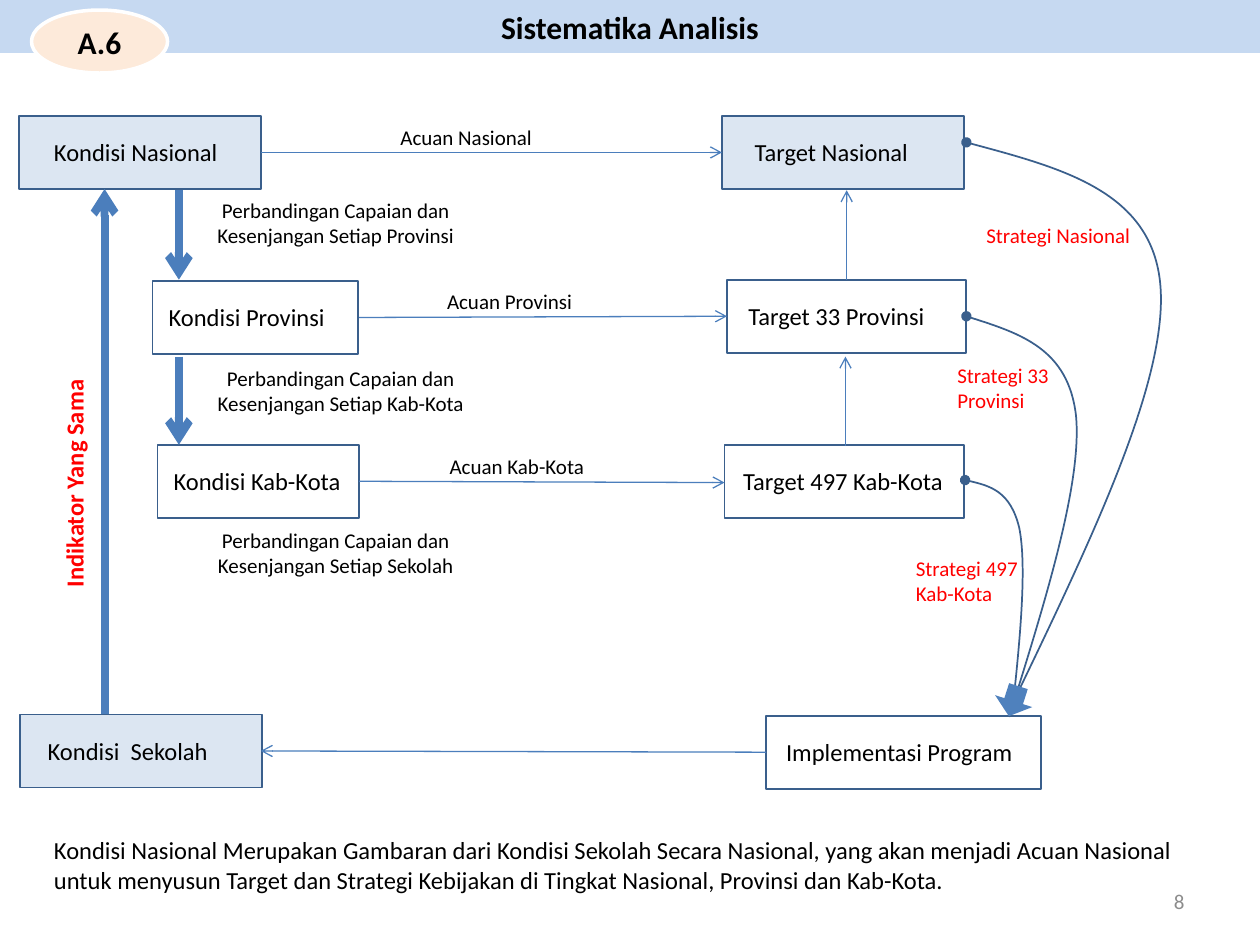
from dataclasses import dataclass

from lxml import etree
from pptx import Presentation
from pptx.dml.color import RGBColor
from pptx.enum.shapes import MSO_CONNECTOR, MSO_SHAPE
from pptx.enum.text import MSO_ANCHOR, MSO_AUTO_SIZE, PP_ALIGN
from pptx.oxml.ns import qn
from pptx.util import Inches, Pt

RECT, ELLIPSE, DOWN_ARROW = MSO_SHAPE.RECTANGLE, MSO_SHAPE.OVAL, MSO_SHAPE.DOWN_ARROW
STRAIGHT = MSO_CONNECTOR.STRAIGHT
LEFT, CENTER, RIGHT = PP_ALIGN.LEFT, PP_ALIGN.CENTER, PP_ALIGN.RIGHT
TOP, MIDDLE = MSO_ANCHOR.TOP, MSO_ANCHOR.MIDDLE
FIT, FIXED = MSO_AUTO_SIZE.SHAPE_TO_FIT_TEXT, MSO_AUTO_SIZE.NONE


@dataclass(frozen=True)
class Theme:
    """Colours, font and type sizes of the slide."""
    font: str = "Calibri"
    heading: int = 18
    body: int = 14
    note: int = 12
    ink: str = "000000"
    accent: str = "FF0000"
    muted: str = "8C8C8C"
    band: str = "C6D9F1"
    tint: str = "DCE6F2"
    badge: str = "FDEADA"
    paper: str = "FFFFFF"
    outline: str = "3A5F8C"
    flow: str = "4B7EBC"
    block: str = "4F81BD"


def rgb(value):
    """Return a colour from its hex value."""
    return RGBColor.from_string(value)


def box_of(at):
    """Return the given inches as lengths."""
    return [Inches(v) for v in at]


class Diagram:
    """Draws styled elements on the current slide."""

    def __init__(self, slide, theme):
        """Keep the slide and its theme."""
        self.s, self.theme = slide, theme

    def set_text(self, sp, text, size, color, bold=False, align=LEFT,
                 anchor=TOP, wrap=True, fit=FIXED):
        """Fill a shape with one styled paragraph."""
        tf = sp.text_frame
        tf.word_wrap, tf.auto_size, tf.vertical_anchor = wrap, fit, anchor
        p = tf.paragraphs[0]
        p.text, p.alignment = text, align
        p.font.name, p.font.size, p.font.bold = self.theme.font, Pt(size), bold
        p.font.color.rgb = rgb(color)

    def title(self, at, text):
        """Format the title placeholder as a band."""
        sp = self.s.shapes.title
        sp.left, sp.top, sp.width, sp.height = box_of(at)
        sp.fill.solid()
        sp.fill.fore_color.rgb = rgb(self.theme.band)
        self.set_text(sp, text, self.theme.heading, self.theme.ink, True, CENTER, MIDDLE)

    def shape(self, kind, at, fill=None, line=None, width=1):
        """Add a preset shape."""
        sp = self.s.shapes.add_shape(kind, *box_of(at))
        sp.shadow.inherit = False
        if fill:
            sp.fill.solid()
            sp.fill.fore_color.rgb = rgb(fill)
        else:
            sp.fill.background()
        if line:
            sp.line.color.rgb = rgb(line)
            sp.line.width = Pt(width)
        else:
            sp.line.fill.background()
        return sp

    def label(self, at, text, size=None, color=None, rotation=0, fit=FIT, **style):
        """Add a text box."""
        sp = self.s.shapes.add_textbox(*box_of(at))
        sp.rotation = rotation
        self.set_text(sp, text, size or self.theme.note, color or self.theme.ink,
                      fit=fit, **style)

    def node(self, left, top, width, text, text_left, text_width, fill=None):
        """Add a process box with its caption."""
        self.shape(RECT, (left, top, width, 0.58), fill, self.theme.outline)
        self.label((text_left, top + 0.12, text_width, 0.34), text,
                   self.theme.body, wrap=False)

    def ends(self, sp, **kinds):
        """Set the line ends of a connector or curve."""
        ln = sp.line._get_or_add_ln()
        for name, kind in kinds.items():
            etree.SubElement(ln, qn(f"a:{name}End")).set("type", kind)

    def arrow(self, start, end, width=0.75):
        """Add a straight arrow."""
        sp = self.s.shapes.add_connector(STRAIGHT, *box_of(start + end))
        sp.line.color.rgb = rgb(self.theme.flow)
        sp.line.width = Pt(width)
        etree.SubElement(sp._element.spPr, qn("a:effectLst"))
        self.ends(sp, tail="arrow")

    def curve(self, start, *segments, **ends):
        """Add a Bezier curve; each segment is two controls and an end."""
        x, y = box_of(start)
        builder = self.s.shapes.build_freeform(x, y)
        builder.add_line_segments([box_of(seg[-1]) for seg in segments], close=False)
        sp = builder.convert_to_shape()
        sp.shadow.inherit = False
        sp.fill.background()
        sp.line.color.rgb = rgb(self.theme.outline)
        sp.line.width = Pt(1)
        for node, seg in zip(list(sp._element.iter(qn("a:lnTo"))), segments):
            bezier = etree.Element(qn("a:cubicBezTo"))
            for point in seg:
                px, py = box_of(point)
                pt = etree.SubElement(bezier, qn("a:pt"))
                pt.set("x", str(px - sp.left))
                pt.set("y", str(py - sp.top))
            node.getparent().replace(node, bezier)
        self.ends(sp, **ends)


def main():
    """Build the analysis flow slide."""
    prs = Presentation()
    prs.slide_width, prs.slide_height = Inches(10), Inches(7.5)
    t = Theme()
    d = Diagram(prs.slides.add_slide(prs.slide_layouts[5]), t)
    d.title((0, 0, 10, 0.42), "Sistematika Analisis")

    for node in (
        (0.16, 5.67, 1.92, "Kondisi  Sekolah", 0.28, 1.48, t.tint),
        (0.15, 0.92, 1.92, "Kondisi Nasional", 0.33, 1.51, t.tint),
        (5.73, 0.92, 1.92, "Target Nasional", 5.89, 1.43, t.tint),
        (5.77, 2.22, 1.9, "Target 33 Provinsi", 5.84, 1.62),
        (5.75, 3.53, 1.9, "Target 497 Kab-Kota", 5.8, 1.8),
        (6.08, 5.68, 2.18, "Implementasi Program", 6.14, 2.01),
        (1.21, 2.23, 1.63, "Kondisi Provinsi", 1.24, 1.45),
        (1.25, 3.53, 1.6, "Kondisi Kab-Kota", 1.28, 1.54),
    ):
        d.node(*node)

    for start, end in (
        ((2.07, 1.21), (5.73, 1.21)),
        ((2.85, 2.52), (5.77, 2.51)),
        ((2.85, 3.82), (5.75, 3.83)),
        ((6.72, 2.22), (6.72, 1.51)),
        ((6.71, 3.54), (6.71, 2.83)),
        ((6.08, 5.97), (2.07, 5.96)),
    ):
        d.arrow(start, end)
    for start, end in (
        ((0.83, 5.67), (0.83, 1.5)),
        ((1.42, 1.51), (1.42, 2.22)),
        ((1.42, 2.83), (1.42, 3.53)),
    ):
        d.arrow(start, end, 4.5)

    d.curve((7.67, 1.13), ((8.41, 1.33), (9.15, 1.52), (9.21, 2.27)),
            ((9.27, 3.02), (8.64, 4.33), (8.01, 5.64)), head="oval", tail="triangle")
    d.curve((7.67, 2.51), ((8.08, 2.64), (8.48, 2.77), (8.54, 3.3)),
            ((8.59, 3.83), (8.3, 4.76), (8.01, 5.69)), head="oval")
    d.curve((7.66, 3.81), ((7.84, 3.85), (8.02, 3.9), (8.09, 4.19)),
            ((8.15, 4.49), (8.1, 5.04), (8.04, 5.6)), head="oval")
    d.shape(DOWN_ARROW, (7.89, 5.44, 0.31, 0.25), t.block).rotation = 17.8

    d.label((-0.34, 3.66, 1.86, 0.34), "Indikator Yang Sama", t.body, t.accent,
            rotation=270, bold=True, wrap=False)
    d.label((0.33, 6.58, 9.42, 0.57),
            "Kondisi Nasional Merupakan Gambaran dari Kondisi Sekolah Secara Nasional, "
            "yang akan menjadi Acuan Nasional untuk menyusun Target dan Strategi "
            "Kebijakan di Tingkat Nasional, Provinsi dan Kab-Kota.", t.body)

    for left, top, width, height, scope in (
        (7.73, 1.72, 1.35, 0.3, "Nasional"),
        (7.5, 2.83, 1.17, 0.5, "33 Provinsi"),
        (7.17, 4.36, 1.04, 0.5, "497 Kab-Kota"),
    ):
        d.label((left, top, width, height), f"Strategi {scope}", color=t.accent,
                wrap=height > 0.3)
    for left, top, level in ((1.58, 1.52, "Provinsi"), (1.62, 2.85, "Kab-Kota"),
                             (1.58, 4.14, "Sekolah")):
        d.label((left, top, 2.17, 0.5),
                f"Perbandingan Capaian dan Kesenjangan Setiap {level}", align=CENTER)
    for left, top, width, level in ((3.08, 0.94, 1.26, "Nasional"),
                                    (3.45, 2.24, 1.2, "Provinsi"),
                                    (3.47, 3.55, 1.28, "Kab-Kota")):
        d.label((left, top, width, 0.3), f"Acuan {level}", wrap=False)

    d.label((7.17, 6.95, 2.33, 0.4), "8", color=t.muted, fit=FIXED,
            align=RIGHT, anchor=MIDDLE)
    badge = d.shape(ELLIPSE, (0.25, 0.08, 1.08, 0.5), t.badge, t.paper, 2)
    d.set_text(badge, "A.6", t.heading, t.ink, True, CENTER, MIDDLE)
    prs.save("out.pptx")


if __name__ == "__main__":
    main()
